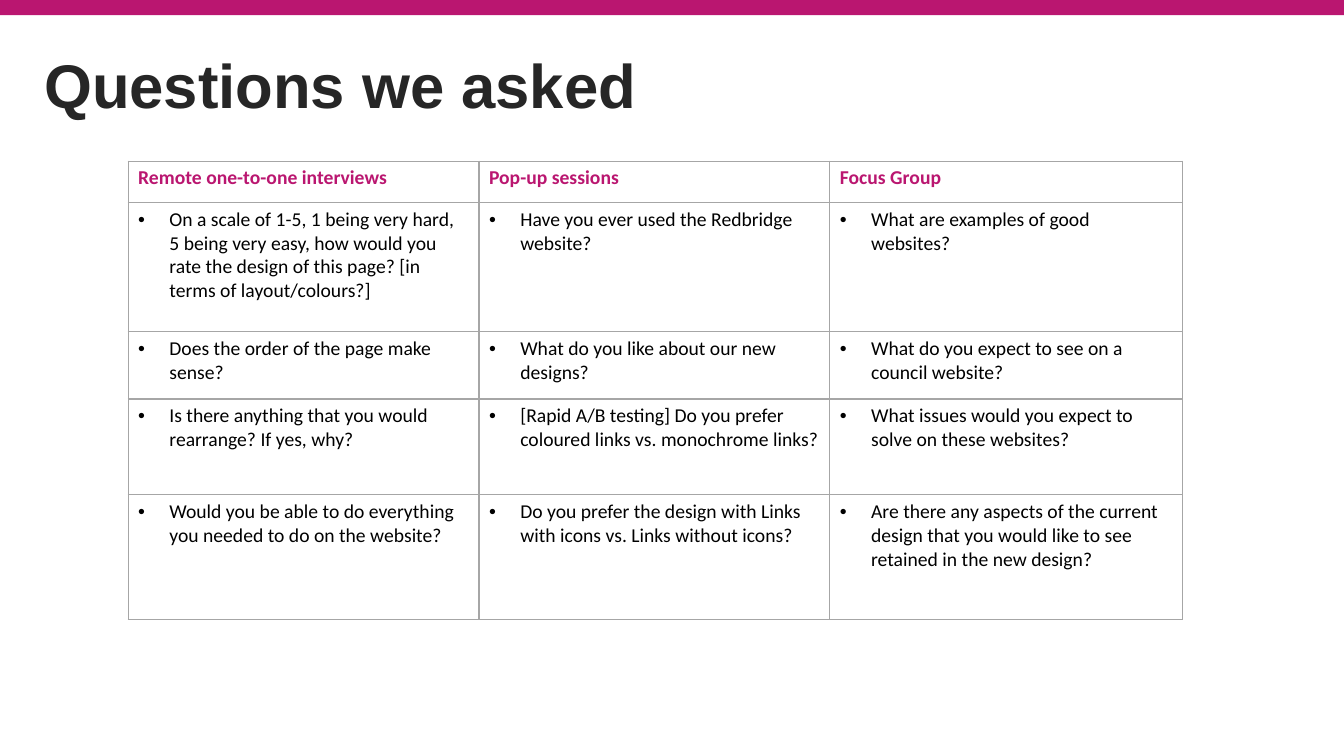
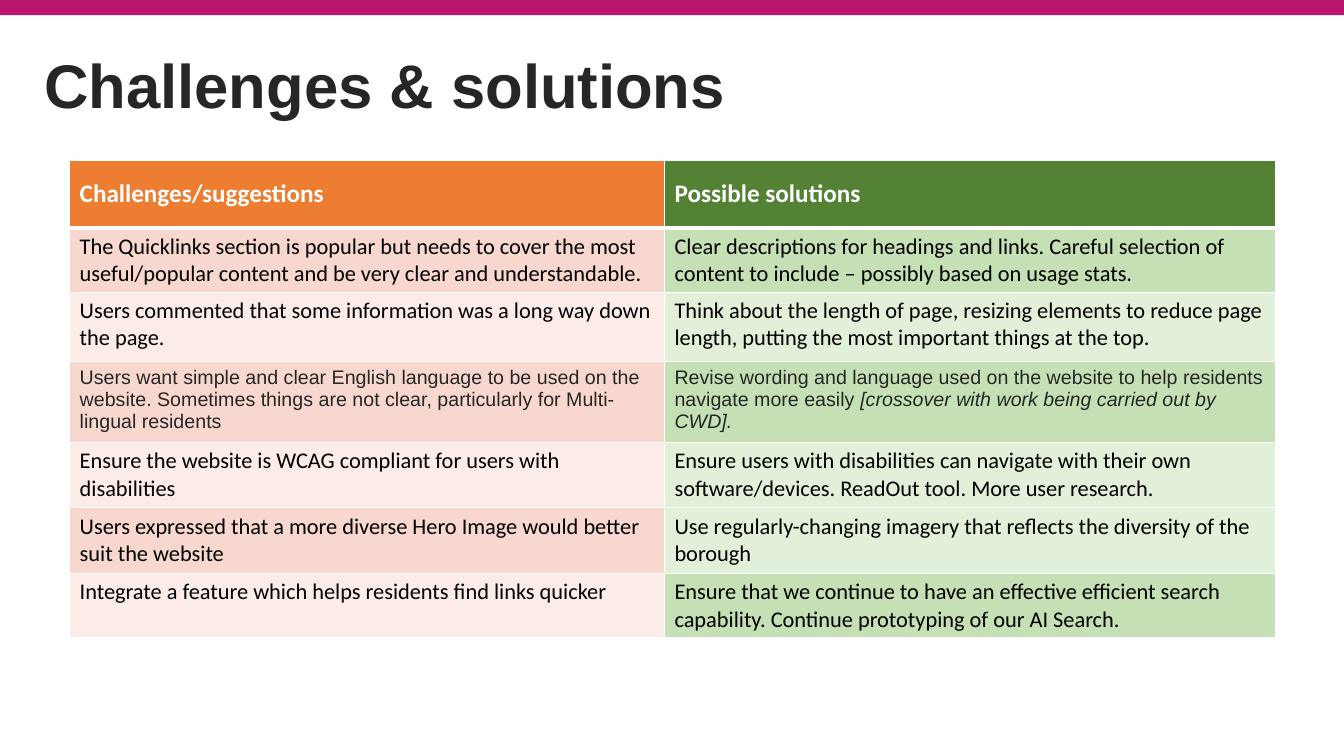
from lxml.etree import SubElement
from pptx import Presentation
from pptx.dml.color import RGBColor
from pptx.enum.shapes import MSO_SHAPE
from pptx.enum.text import MSO_ANCHOR
from pptx.oxml.ns import qn
from pptx.util import Inches, Pt

COLORS = {
    "band": "BA1670", "title": "262626", "body": "000000", "white": "FFFFFF",
    "grid": "A6A6A6", "orange": "ED7D31", "green": "548235",
    "peach": "F8D7CE", "pale_peach": "FCECE8",
    "mint": "C5E0B4", "pale_mint": "E2F0D9",
}
HEAD_FONT, BODY_FONT = "Arial", "Calibri"

# Boxes are left, top, width, height in percent of the slide
BAND_BOX = (0, 0, 100, 2)
TITLE_BOX = (2.55, 2, 94.9, 19.33)
QUESTIONS_BOX = (9.53, 21.33, 78.47, 60.67)
SOLUTIONS_BOX = (5.18, 21.2, 89.72, 62.5)

# Relative column widths and row heights
QUESTION_COLUMNS, QUESTION_ROWS = (3.48, 3.48, 3.5), (0.41, 1.28, 0.67, 0.95, 1.24)
SOLUTION_COLUMNS = (5.9, 6.06)
SOLUTION_ROWS = (0.67, 0.64, 0.69, 0.75, 0.65, 0.65, 0.64)

QUESTIONS = [
    ("Remote one-to-one interviews", "Pop-up sessions", "Focus Group"),
    ("On a scale of 1-5, 1 being very hard, 5 being very easy, how would you "
     "rate the design of this page? [in terms of layout/colours?]",
     "Have you ever used the Redbridge website?",
     "What are examples of good websites?"),
    ("Does the order of the page make sense?",
     "What do you like about our new designs?",
     "What do you expect to see on a council website?"),
    ("Is there anything that you would rearrange? If yes, why?",
     "[Rapid A/B testing] Do you prefer coloured links vs. monochrome links?",
     "What issues would you expect to solve on these websites?"),
    ("Would you be able to do everything you needed to do on the website?",
     "Do you prefer the design with Links with icons vs. Links without icons?",
     "Are there any aspects of the current design that you would like to see "
     "retained in the new design?"),
]

SOLUTIONS = [
    ("Challenges/suggestions", "Possible solutions"),
    ("The Quicklinks section is popular but needs to cover the most "
     "useful/popular content and be very clear and understandable.",
     "Clear descriptions for headings and links. Careful selection of content "
     "to include – possibly based on usage stats."),
    ("Users commented that some information was a long way down the page.",
     "Think about the length of page, resizing elements to reduce page length, "
     "putting the most important things at the top."),
    ("Users want simple and clear English language to be used on the website. "
     "Sometimes things are not clear, particularly for Multi-lingual residents",
     "Revise wording and language used on the website to help residents "
     "navigate more easily "),
    ("Ensure the website is WCAG compliant for users with disabilities",
     "Ensure users with disabilities can navigate with their own "
     "software/devices. ReadOut tool. More user research."),
    ("Users expressed that a more diverse Hero Image would better suit the website",
     "Use regularly-changing imagery that reflects the diversity of the borough"),
    ("Integrate a feature which helps residents find links quicker",
     "Ensure that we continue to have an effective efficient search capability. "
     "Continue prototyping of our AI Search."),
]
LANGUAGE_ROW = 3
CROSSOVER_NOTE = "[crossover with work being carried out by CWD]."
SOLUTION_FILLS = [
    ("orange", "green"), ("peach", "mint"), ("pale_peach", "pale_mint"),
    ("peach", "mint"), ("pale_peach", "pale_mint"), ("peach", "pale_mint"),
    ("pale_peach", "mint"),
]


def rgb(name):
    return RGBColor.from_string(COLORS[name])


def place(prs, box):
    """Turn a percent box into slide units."""
    sides = (prs.slide_width, prs.slide_height) * 2
    return [round(side * share / 100) for side, share in zip(sides, box)]


def style_runs(paragraph, size, color, font=BODY_FONT, bold=False):
    for run in paragraph.runs:
        run.font.size, run.font.name, run.font.bold = Pt(size), font, bold
        run.font.color.rgb = rgb(color)


def set_borders(cell, color, bottom=1):
    props = cell._tc.get_or_add_tcPr()
    for side, width in (("L", 1), ("R", 1), ("T", 1), ("B", bottom)):
        line = SubElement(props, qn(f"a:ln{side}"), w=str(Pt(width)))
        fill = SubElement(line, qn("a:solidFill"))
        SubElement(fill, qn("a:srgbClr"), val=COLORS[color])


def add_bullet(paragraph, indent=0.31):
    props = paragraph._p.get_or_add_pPr()
    props.set("marL", str(Inches(indent)))
    props.set("indent", str(-Inches(indent)))
    SubElement(props, qn("a:buFont"), typeface="Arial")
    SubElement(props, qn("a:buChar"), char="•")


def add_titled_slide(prs, title):
    """Blank slide with the shared top band and title."""
    slide = prs.slides.add_slide(prs.slide_layouts[6])
    band = slide.shapes.add_shape(MSO_SHAPE.RECTANGLE, *place(prs, BAND_BOX))
    band.shadow.inherit = False
    band.fill.solid()
    band.fill.fore_color.rgb = rgb("band")
    band.line.fill.background()

    heading = slide.shapes.add_textbox(*place(prs, TITLE_BOX)).text_frame
    heading.word_wrap = True
    heading.vertical_anchor = MSO_ANCHOR.MIDDLE
    heading.text = title
    heading.paragraphs[0].line_spacing = 0.9
    style_runs(heading.paragraphs[0], 44, "title", HEAD_FONT, True)
    return slide


def add_grid(slide, box, columns, rows, texts):
    """Table filling the box, divided by relative columns and rows."""
    left, top, width, height = box
    table = slide.shapes.add_table(len(rows), len(columns), left, top, width, height).table
    for column, share in zip(table.columns, columns):
        column.width = round(width * share / sum(columns))
    for row, share in zip(table.rows, rows):
        row.height = round(height * share / sum(rows))
    for r, row_texts in enumerate(texts):
        for c, text in enumerate(row_texts):
            table.cell(r, c).text_frame.text = text
    return table


def finish_cell(cell, fill, border, bottom=1):
    set_borders(cell, border, bottom)
    cell.fill.solid()
    cell.fill.fore_color.rgb = rgb(fill)


def add_questions(slide, box):
    table = add_grid(slide, box, QUESTION_COLUMNS, QUESTION_ROWS, QUESTIONS)
    for r in range(len(QUESTION_ROWS)):
        for c in range(len(QUESTION_COLUMNS)):
            cell = table.cell(r, c)
            question = cell.text_frame.paragraphs[0]
            is_header = r == 0
            if not is_header:
                add_bullet(question)
            style_runs(question, 14, "band" if is_header else "body", bold=is_header)
            finish_cell(cell, "white", "grid")


def add_solutions(slide, box):
    table = add_grid(slide, box, SOLUTION_COLUMNS, SOLUTION_ROWS, SOLUTIONS)
    # The crossover note follows the language solution in italics
    note = table.cell(LANGUAGE_ROW, 1).text_frame.paragraphs[0].add_run()
    note.text = CROSSOVER_NOTE
    note.font.italic = True
    for r, fills in enumerate(SOLUTION_FILLS):
        for c, fill in enumerate(fills):
            cell = table.cell(r, c)
            entry = cell.text_frame.paragraphs[0]
            if r == 0:
                cell.vertical_anchor = MSO_ANCHOR.MIDDLE
                style_runs(entry, 18, "white", bold=True)
            elif r == LANGUAGE_ROW:
                style_runs(entry, 14, "title", HEAD_FONT)
            else:
                style_runs(entry, 16, "body")
            finish_cell(cell, fill, "white", 3 if r == 0 else 1)


def main():
    prs = Presentation()
    prs.slide_width, prs.slide_height = Inches(13.33), Inches(7.5)
    add_questions(add_titled_slide(prs, "Questions we asked"), place(prs, QUESTIONS_BOX))
    add_solutions(add_titled_slide(prs, "Challenges & solutions"), place(prs, SOLUTIONS_BOX))
    prs.save("out.pptx")


if __name__ == "__main__":
    main()
